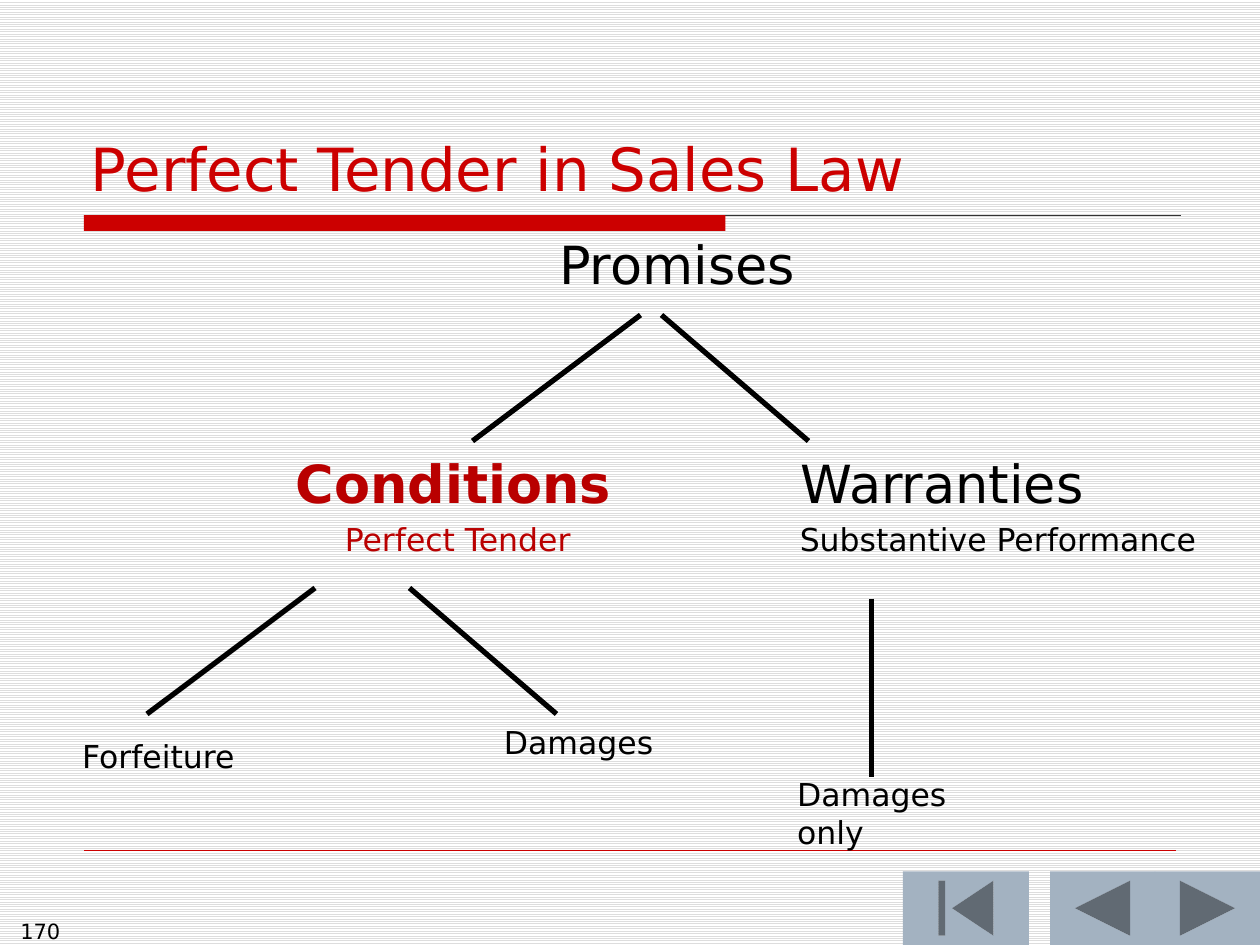
from lxml.etree import SubElement
from pptx import Presentation
from pptx.dml.color import RGBColor
from pptx.enum.dml import MSO_PATTERN
from pptx.enum.shapes import MSO_CONNECTOR, MSO_SHAPE
from pptx.enum.text import MSO_ANCHOR, PP_ALIGN
from pptx.oxml.ns import qn
from pptx.util import Pt

FONT = "DejaVu Sans"
RED, DARK_RED, BLACK = "CC0000", "B90000", "000000"
LEFT, CENTER, RIGHT = PP_ALIGN.LEFT, PP_ALIGN.CENTER, PP_ALIGN.RIGHT

TITLE = ("Perfect Tender in Sales Law", 52, 23.8, 680, 92.4, 34, RED, False, LEFT)
PAGE_NUMBER = ("170", 0, 525, 34.5, 15, 12, BLACK, False, RIGHT)
LABELS = [
    ("Promises", 287, 132.5, 200, 36, 30, BLACK, False, CENTER),
    ("Conditions", 169, 258, 200, 36, 30, DARK_RED, True, LEFT),
    ("Warranties", 457.5, 258, 200, 36, 30, BLACK, False, LEFT),
    ("Perfect Tender", 197, 297, 170, 22, 18, DARK_RED, False, LEFT),
    ("Substantive Performance", 457, 297, 250, 22, 18, BLACK, False, LEFT),
    ("Forfeiture", 47, 421, 100, 22, 18, BLACK, False, LEFT),
    ("Damages", 288, 413, 100, 22, 18, BLACK, False, LEFT),
    ("Damages only", 455.5, 443, 100, 43, 18, BLACK, False, LEFT),
]
BRANCHES = [
    (366, 180, 270, 252),
    (378, 180, 462, 252),
    (180, 336, 84, 408),
    (234, 336, 318, 408),
    (498, 342, 498, 444),
]
BUTTONS = [
    (MSO_SHAPE.ACTION_BUTTON_BACK_OR_PREVIOUS, 600, 60),
    (MSO_SHAPE.ACTION_BUTTON_BEGINNING, 516, 72),
    (MSO_SHAPE.ACTION_BUTTON_FORWARD_OR_NEXT, 660, 60),
]


def color(value):
    return RGBColor.from_string(value)


def add_label(page, text, left, top, width, height, size, ink, bold, align):
    box = page.shapes.add_textbox(Pt(left), Pt(top), Pt(width), Pt(height))
    frame = box.text_frame
    frame.word_wrap = True
    frame.margin_left = frame.margin_right = 0
    frame.margin_top = frame.margin_bottom = 0
    para = frame.paragraphs[0]
    para.text = text
    para.alignment = align
    para.font.name = FONT
    para.font.size = Pt(size)
    para.font.bold = bold
    para.font.color.rgb = color(ink)
    return frame


def add_line(page, ends, ink, weight):
    line = page.shapes.add_connector(MSO_CONNECTOR.STRAIGHT, *map(Pt, ends))
    line.line.color.rgb = color(ink)
    line.line.width = Pt(weight)
    SubElement(line._element.spPr, qn("a:effectLst"))


def add_block(page, kind, left, top, width, height, fill):
    block = page.shapes.add_shape(kind, Pt(left), Pt(top), Pt(width), Pt(height))
    block.shadow.inherit = False
    block.fill.solid()
    block.fill.fore_color.rgb = color(fill)
    block.line.fill.background()


def main():
    deck = Presentation()
    deck.slide_width, deck.slide_height = Pt(720), Pt(540)
    page = deck.slides.add_slide(deck.slide_layouts[6])

    background = page.background.fill
    background.patterned()
    background.pattern = MSO_PATTERN.LIGHT_HORIZONTAL
    background.fore_color.rgb = color("DDDDDD")
    background.back_color.rgb = color("FFFFFF")

    add_line(page, (48, 123, 675, 123), "333333", 0.75)
    add_block(page, MSO_SHAPE.RECTANGLE, 48, 123, 366.5, 9, RED)
    add_line(page, (48, 486, 672, 486), RED, 0.25)
    for kind, left, width in BUTTONS:
        add_block(page, kind, left, 498, width, 42, "A3B2C1")

    add_label(page, *PAGE_NUMBER)
    add_label(page, *TITLE).vertical_anchor = MSO_ANCHOR.BOTTOM
    for label in LABELS:
        add_label(page, *label)
    for ends in BRANCHES:
        add_line(page, ends, BLACK, 3)

    deck.save("out.pptx")


if __name__ == "__main__":
    main()
